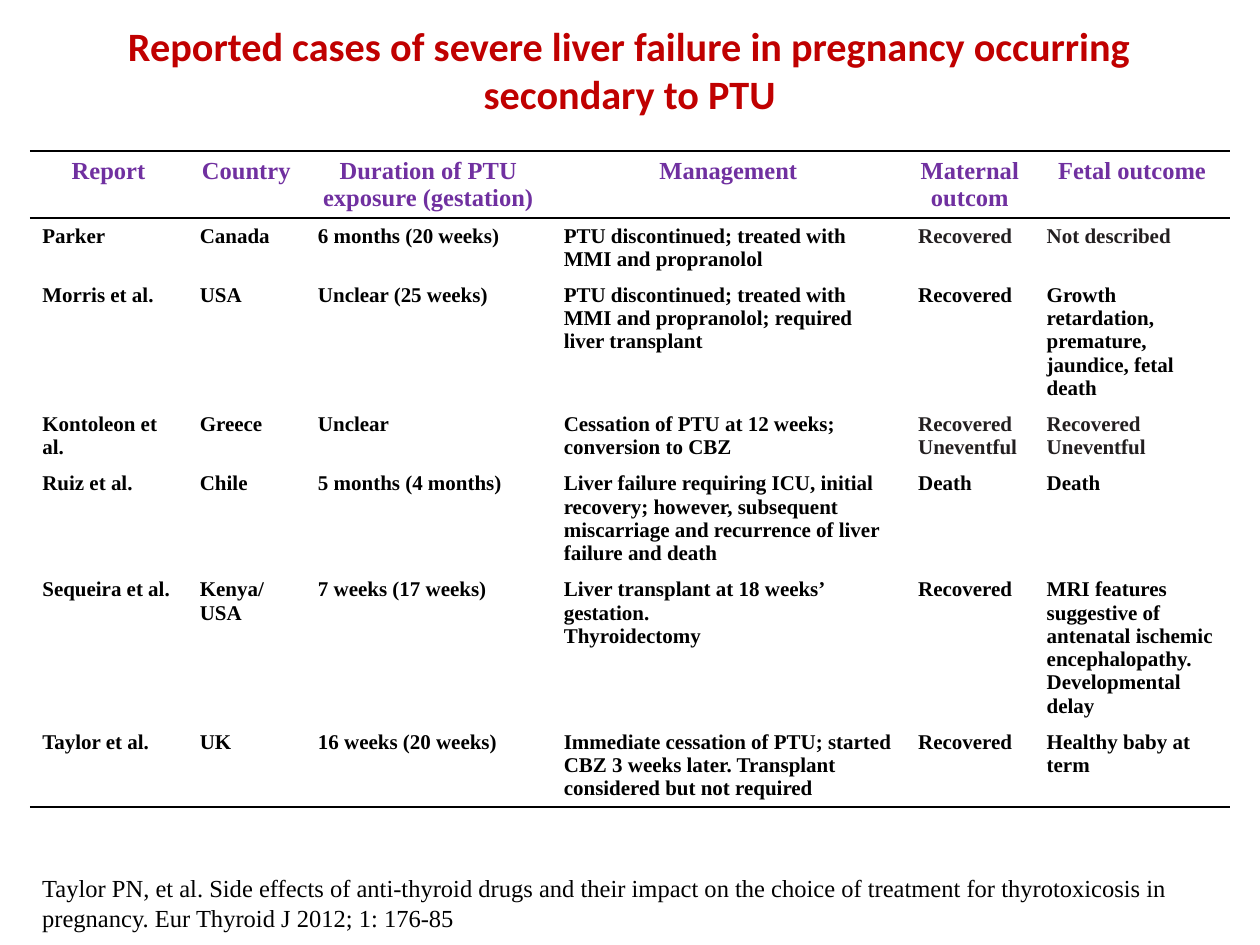
from lxml.etree import SubElement
from pptx import Presentation
from pptx.dml.color import RGBColor
from pptx.enum.text import MSO_ANCHOR, PP_ALIGN
from pptx.oxml.ns import qn
from pptx.util import Pt

TITLE = "Reported cases of severe liver failure in pregnancy occurring secondary to PTU"
CITATION = (
    "Taylor PN, et al. Side effects of anti-thyroid drugs and their impact on the choice of "
    "treatment for thyrotoxicosis in pregnancy. Eur Thyroid J 2012; 1: 176-85"
)
HEADERS = ["Report", "Country", "Duration of PTU\nexposure (gestation)", "Management",
           "Maternal\noutcom", "Fetal outcome"]
CASES = [
    ["Parker", "Canada", "6 months (20 weeks)",
     "PTU discontinued; treated with MMI and propranolol", "Recovered", "Not described"],
    ["Morris et al.", "USA", "Unclear (25 weeks)",
     "PTU discontinued; treated with MMI and propranolol; required liver transplant",
     "Recovered", "Growth retardation, premature, jaundice, fetal death"],
    ["Kontoleon et al.", "Greece", "Unclear",
     "Cessation of PTU at 12 weeks; conversion to CBZ",
     "Recovered Uneventful", "Recovered Uneventful"],
    ["Ruiz et al.", "Chile", "5 months (4 months)",
     "Liver failure requiring ICU, initial recovery; however, subsequent miscarriage and "
     "recurrence of liver failure and death", "Death", "Death"],
    ["Sequeira et al.", "Kenya/\nUSA", "7 weeks (17 weeks)",
     "Liver transplant at 18 weeks’ gestation.\nThyroidectomy", "Recovered",
     "MRI features suggestive of\nantenatal ischemic\nencephalopathy.\nDevelopmental delay"],
    ["Taylor et al.", "UK", "16 weeks (20 weeks)",
     "Immediate cessation of PTU; started CBZ 3 weeks later. Transplant considered but not "
     "required", "Recovered", "Healthy baby at term"],
]
SOFT_CASES = {"Parker", "Kontoleon et al."}
FIRST_OUTCOME_COLUMN = 4
COLUMN_WIDTHS = [90, 67.5, 140.5, 202.5, 73.5, 112]
ROW_HEIGHT = 29.5
MARGIN = 17

THEME = {
    "title": {"name": "Calibri", "size": Pt(23), "bold": True, "color": "C00000"},
    "header": {"name": "Times New Roman", "size": Pt(14), "bold": True, "color": "7030A0"},
    "body": {"name": "Times New Roman", "size": Pt(12), "bold": True, "color": "000000"},
    "soft": {"name": "Times New Roman", "size": Pt(12), "bold": True, "color": "231F20"},
    "citation": {"name": "Times New Roman", "size": Pt(14), "bold": False, "color": "000000"},
    "rule": "000000",
}


def write_text(text_frame, text, style, alignment=PP_ALIGN.LEFT):
    text_frame.text = text
    for paragraph in text_frame.paragraphs:
        paragraph.alignment = alignment
        for run in paragraph.runs:
            for attribute, value in THEME[style].items():
                if attribute == "color":
                    run.font.color.rgb = RGBColor.from_string(value)
                else:
                    setattr(run.font, attribute, value)


def add_text(slide, bounds, text, style, alignment=PP_ALIGN.LEFT, anchor=MSO_ANCHOR.TOP):
    text_frame = slide.shapes.add_textbox(*map(Pt, bounds)).text_frame
    text_frame.word_wrap = True
    text_frame.vertical_anchor = anchor
    write_text(text_frame, text, style, alignment)


def set_borders(cell, ruled_sides):
    properties = cell._tc.get_or_add_tcPr()
    for position, side in enumerate("LRTB"):
        line = SubElement(properties, qn(f"a:ln{side}"), w=str(Pt(1)))
        if side in ruled_sides:
            fill = SubElement(line, qn("a:solidFill"))
            SubElement(fill, qn("a:srgbClr"), val=THEME["rule"])
        else:
            SubElement(line, qn("a:noFill"))
        properties.insert(position, line)


def add_case_table(slide):
    rows = [HEADERS, *CASES]
    bounds = (MARGIN, 86.4, sum(COLUMN_WIDTHS), ROW_HEIGHT * len(rows))
    table = slide.shapes.add_table(len(rows), len(HEADERS), *map(Pt, bounds)).table
    table.horz_banding = False
    for column, width in zip(table.columns, COLUMN_WIDTHS):
        column.width = Pt(width)
    ruled_sides = {0: "TB", 1: "T", len(CASES): "B"}
    for row_index, row in enumerate(rows):
        table.rows[row_index].height = Pt(ROW_HEIGHT)
        for column_index, text in enumerate(row):
            cell = table.cell(row_index, column_index)
            cell.fill.background()
            set_borders(cell, ruled_sides.get(row_index, ""))
            if row_index == 0:
                write_text(cell.text_frame, text, "header", PP_ALIGN.CENTER)
            else:
                soft = row[0] in SOFT_CASES and column_index >= FIRST_OUTCOME_COLUMN
                write_text(cell.text_frame, text, "soft" if soft else "body")


def main():
    """Build the slide of reported liver failure cases."""
    presentation = Presentation()
    presentation.slide_width, presentation.slide_height = Pt(720), Pt(540)
    slide = presentation.slides.add_slide(presentation.slide_layouts[6])
    add_case_table(slide)
    add_text(slide, (36, 6, 648, 67.5), TITLE, "title", PP_ALIGN.CENTER, MSO_ANCHOR.MIDDLE)
    add_text(slide, (MARGIN, 495.5, 686, 41), CITATION, "citation")
    presentation.save("out.pptx")


if __name__ == "__main__":
    main()
